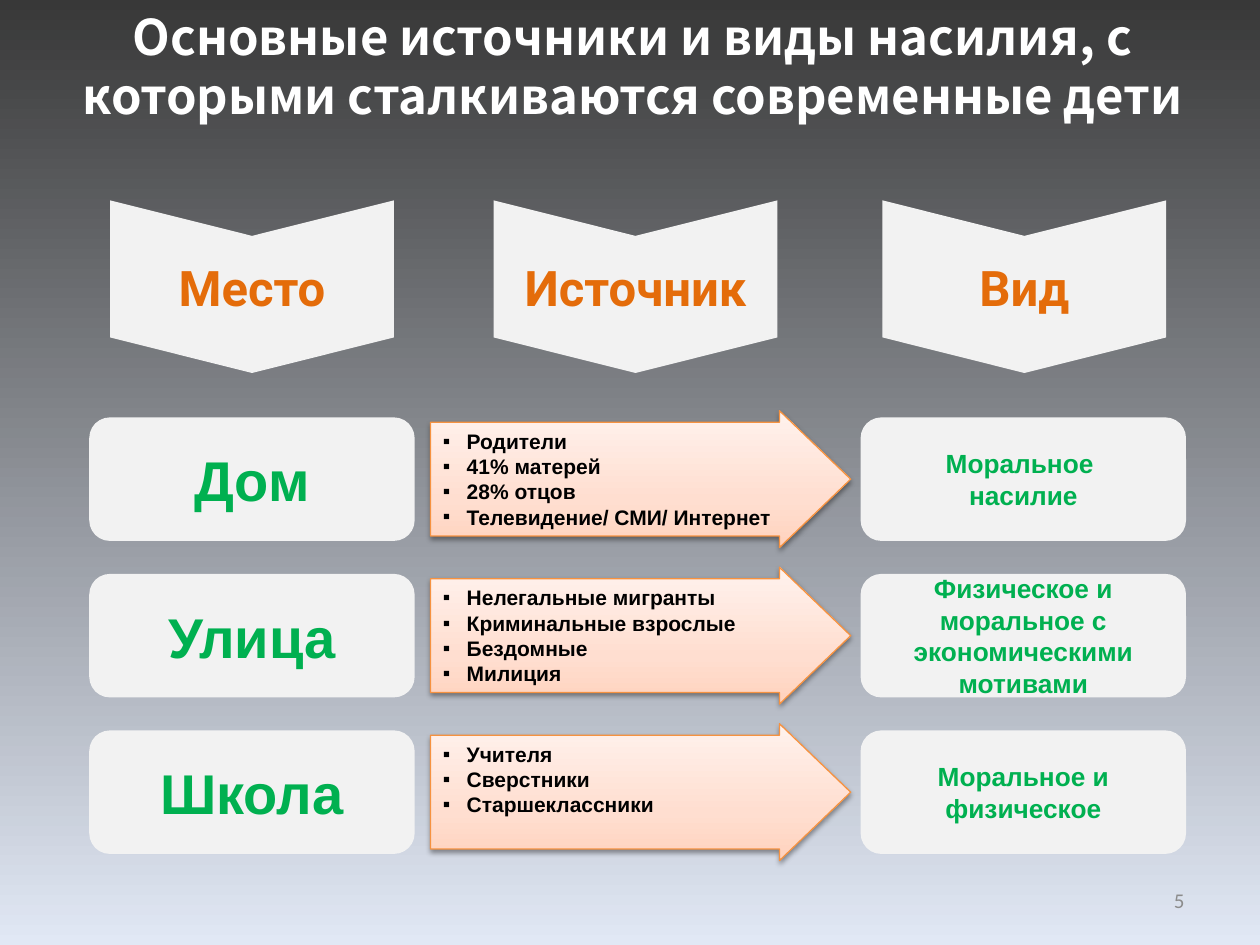
from lxml.etree import SubElement
from pptx import Presentation
from pptx.dml.color import RGBColor
from pptx.enum.shapes import MSO_SHAPE
from pptx.enum.text import MSO_ANCHOR, PP_ALIGN
from pptx.oxml.ns import qn
from pptx.util import Cm, Pt

ROWS = [
    ("Дом",
     ["Родители", "41% матерей", "28% отцов", "Телевидение/ СМИ/ Интернет"],
     ["Моральное ", "насилие"]),
    ("Улица",
     ["Нелегальные мигранты", "Криминальные взрослые", "Бездомные", "Милиция"],
     ["Физическое и моральное с экономическими мотивами"]),
    ("Школа",
     ["Учителя", "Сверстники", "Старшеклассники"],
     ["Моральное и физическое"]),
]
HEADINGS = [("Место", 5.08), ("Источник", 12.81), ("Вид", 20.65)]  # text, centre
FIRST_ROW, ROW_STEP = 9.66, 3.155  # centre lines, cm


def color(hex_value):
    return RGBColor.from_string(hex_value)


def write(frame, lines, font="Arial", size=12, ink="000000", bold=True,
          align=PP_ALIGN.CENTER, anchor=MSO_ANCHOR.MIDDLE):
    frame.word_wrap = True
    frame.vertical_anchor = anchor
    for index, line in enumerate(lines):
        paragraph = frame.add_paragraph() if index else frame.paragraphs[0]
        paragraph.alignment = align
        run = paragraph.add_run()
        run.text = line
        run.font.name, run.font.size, run.font.bold = font, Pt(size), bold
        run.font.color.rgb = color(ink)
        for script in ("a:ea", "a:cs"):
            SubElement(run.font._element, qn(script), typeface=font)


def add_bullets(frame, indent=0.48):
    for paragraph in frame.paragraphs:
        properties = paragraph._p.get_or_add_pPr()
        properties.set("marL", str(Cm(indent)))
        properties.set("indent", str(-Cm(indent)))
        SubElement(properties, qn("a:buFont"), typeface="Arial")
        SubElement(properties, qn("a:buChar"), char="▪")


def add_gradient(fill, owner, stops, angle):
    """Fill with (percent, hex) stops; the angle runs counter-clockwise."""
    fill.gradient()
    fill.gradient_angle = angle
    stop_list = owner.find(".//" + qn("a:gsLst"))
    for old_stop in list(stop_list):
        stop_list.remove(old_stop)
    for percent, value in stops:
        stop = SubElement(stop_list, qn("a:gs"), pos=str(percent * 1000))
        SubElement(stop, qn("a:srgbClr"), val=value)


def add_shadow(shape):
    effects = SubElement(shape._element.spPr, qn("a:effectLst"))
    shadow = SubElement(effects, qn("a:outerShdw"), blurRad=str(Pt(3.1)),
                        dist=str(Pt(1.6)), dir="5400000", rotWithShape="0")
    tint = SubElement(shadow, qn("a:srgbClr"), val="000000")
    SubElement(tint, qn("a:alpha"), val="38000")


class Board:
    panel, heading_ink, label_ink = "F2F2F2", "E46C0A", "00B050"
    arrow_stops = [(0, "FFD2BD"), (35, "FFDED0"), (100, "FFF2ED")]
    arrow_line = "F69240"
    sky_stops = [(0, "383838"), (100, "E1E8F5")]

    def __init__(self, slide):
        self.slide = slide
        add_gradient(slide.background.fill, slide._element, self.sky_stops, 270)

    def title(self, text):
        title = self.slide.shapes.title
        title.left, title.top, title.width, title.height = (
            Cm(0.1), Cm(0), Cm(25.3), Cm(2.64))
        write(title.text_frame, [text], font="Noto Sans CJK KR", size=28,
              ink="FFFFFF", anchor=MSO_ANCHOR.TOP)

    def shape(self, kind, left, middle, width, height):
        return self.slide.shapes.add_shape(
            kind, Cm(left), Cm(middle - height / 2), Cm(width), Cm(height))

    def flat_panel(self, *place):
        panel = self.shape(*place)
        panel.shadow.inherit = False
        panel.fill.solid()
        panel.fill.fore_color.rgb = color(self.panel)
        panel.line.fill.background()
        return panel

    def heading(self, text, center):
        length, breadth = 3.48, 5.72
        chevron = self.flat_panel(MSO_SHAPE.CHEVRON, center - length / 2, 5.78,
                                  length, breadth)
        chevron.rotation = 90
        chevron.adjustments[0] = 0.206
        write(chevron.text_frame, [text], font="Roboto", size=28,
              ink=self.heading_ink)
        chevron.text_frame._txBody.bodyPr.set("vert", "vert270")

    def card(self, lines, left, middle, size):
        card = self.flat_panel(MSO_SHAPE.ROUNDED_RECTANGLE, left, middle, 6.56, 2.49)
        write(card.text_frame, lines, size=size, ink=self.label_ink)

    def sources(self, lines, middle):
        arrow = self.shape(MSO_SHAPE.RIGHT_ARROW, 8.68, middle, 8.47, 2.76)
        arrow.adjustments[0], arrow.adjustments[1] = 0.83, 0.52
        add_gradient(arrow.fill, arrow._element, self.arrow_stops, 90)
        arrow.line.color.rgb = color(self.arrow_line)
        arrow.line.width = Pt(0.75)
        add_shadow(arrow)
        write(arrow.text_frame, lines, align=PP_ALIGN.LEFT, anchor=MSO_ANCHOR.TOP)
        add_bullets(arrow.text_frame)

    def page_number(self, number):
        box = self.slide.shapes.add_textbox(Cm(18.2), Cm(17.65), Cm(5.93), Cm(1.01))
        write(box.text_frame, [number], font="Calibri", ink="8C8C8C", bold=False,
              align=PP_ALIGN.RIGHT)


def main():
    deck = Presentation()
    deck.slide_width, deck.slide_height = Cm(25.4), Cm(19.05)
    board = Board(deck.slides.add_slide(deck.slide_layouts[5]))
    board.title("Основные источники и виды насилия, с которыми "
                "сталкиваются современные дети")
    for text, center in HEADINGS:
        board.heading(text, center)
    for index, (place, sources, violence) in enumerate(ROWS):
        middle = FIRST_ROW + index * ROW_STEP
        board.card([place], 1.8, middle, 32)
        board.sources(sources, middle)
        board.card(violence, 17.35, middle, 15)
    board.page_number("5")
    deck.save("out.pptx")


if __name__ == "__main__":
    main()
